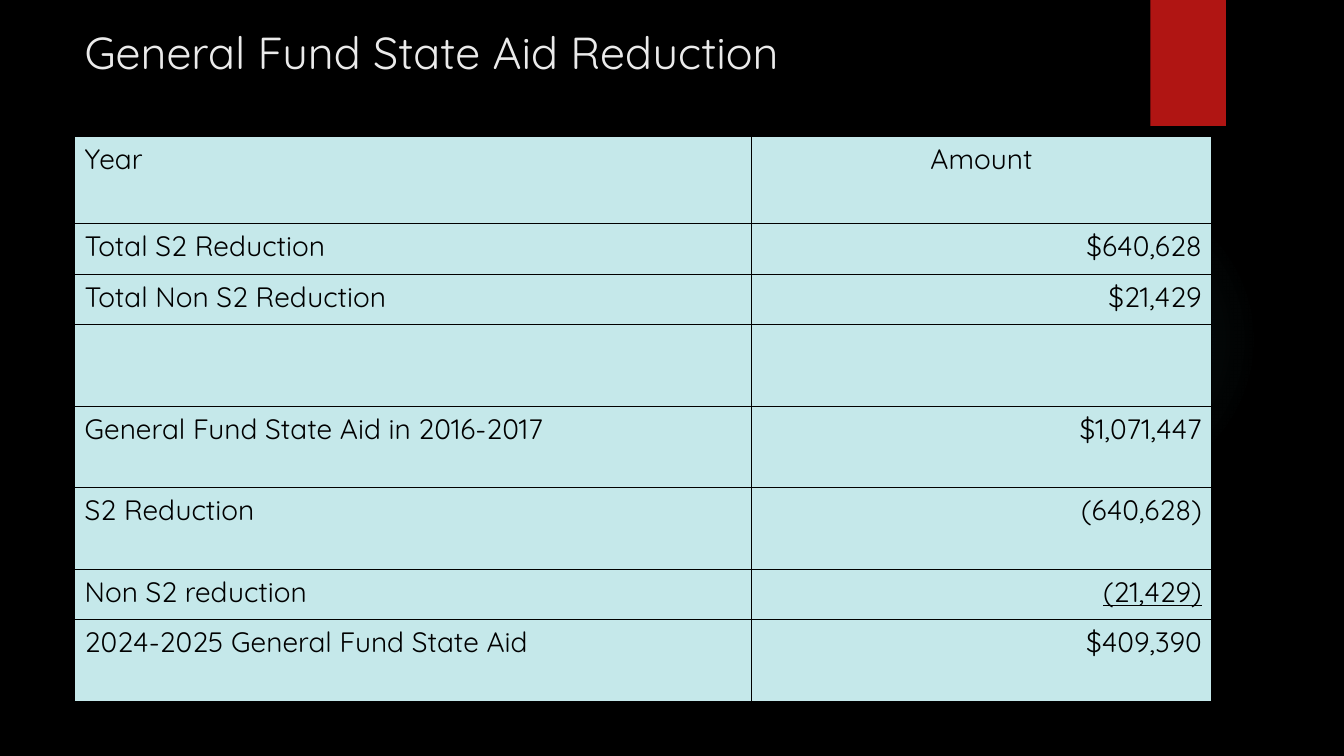
"""Build the General Fund state aid reduction slide."""
from dataclasses import dataclass

import lxml.etree
import pptx
import pptx.dml.color
import pptx.enum.shapes
import pptx.enum.text
import pptx.oxml
import pptx.oxml.ns
import pptx.util

Inches = pptx.util.Inches
Align = pptx.enum.text.PP_ALIGN
ShapeType = pptx.enum.shapes.MSO_SHAPE


@dataclass(frozen=True)
class Theme:
    """Colours, font and type sizes of the slide."""
    font: str = "Quicksand"
    background: str = "000000"
    accent: str = "B01513"
    glow: str = "50B9C1"
    title: str = "EBEBEB"
    cell: str = "C5E8EA"
    ink: str = "000000"
    title_size: int = 32
    table_size: int = 20


THEME = Theme()
COLUMN_WIDTHS = (6.71, 4.57)
TABLE_ROWS = (
    (0.87, "Year", "Amount"),
    (0.5, "Total S2 Reduction", "$640,628"),
    (0.5, "Total Non S2 Reduction", "$21,429"),
    (0.81, "", ""),
    (0.81, "General Fund State Aid in 2016-2017", "$1,071,447"),
    (0.81, "S2 Reduction", "(640,628)"),
    (0.5, "Non S2 reduction", "(21,429)"),
    (0.81, "2024-2025 General Fund State Aid", "$409,390"),
)
UNDERLINED = "(21,429)"


def rgb(value):
    """Return the colour for a hex value."""
    return pptx.dml.color.RGBColor.from_string(value)


def write_text(text_frame, text, *, size, color, align=Align.LEFT, underline=None):
    """Write one formatted paragraph into a text frame."""
    paragraph = text_frame.paragraphs[0]
    paragraph.alignment = align
    font = paragraph.font
    if text:
        run = paragraph.add_run()
        run.text = text
        font = run.font
    font.name = THEME.font
    font.size = pptx.util.Pt(size)
    font.color.rgb = rgb(color)
    font.underline = underline


def add_plain_shape(slide, kind, left, top, width, height):
    """Add a preset shape without line or shadow."""
    shape = slide.shapes.add_shape(
        kind, Inches(left), Inches(top), Inches(width), Inches(height))
    shape.shadow.inherit = False
    shape.line.fill.background()
    return shape


def add_glow(slide):
    """Add the faint round glow that fades towards its edge."""
    glow = add_plain_shape(slide, ShapeType.OVAL, 9.41, 1.83, 3.08, 3.08)
    glow.fill.background()
    stops = "".join(
        f'<a:gs pos="{position}000"><a:srgbClr val="{THEME.glow}">'
        f'<a:alpha val="{opacity}000"/></a:srgbClr></a:gs>'
        for position, opacity in ((0, 7), (36, 6), (69, 0)))
    gradient = pptx.oxml.parse_xml(
        f'<a:gradFill {pptx.oxml.ns.nsdecls("a")}><a:gsLst>{stops}</a:gsLst>'
        '<a:path path="circle"><a:fillToRect l="50000" t="50000" r="50000" b="50000"/>'
        '</a:path></a:gradFill>')
    properties = glow.element.spPr
    properties.replace(properties.find(pptx.oxml.ns.qn("a:noFill")), gradient)


def add_accent_bar(slide):
    """Add the red bar at the top edge."""
    bar = add_plain_shape(slide, ShapeType.RECTANGLE, 11.41, 0, 0.75, 1.25)
    bar.fill.solid()
    bar.fill.fore_color.rgb = rgb(THEME.accent)


def add_title(slide, text):
    """Add the slide title."""
    box = slide.shapes.add_textbox(Inches(0.74), Inches(0.2), Inches(10.29), Inches(1))
    box.text_frame.word_wrap = True
    write_text(box.text_frame, text, size=THEME.title_size, color=THEME.title)


def style_cell(cell):
    """Give a cell thin borders and the table fill."""
    properties = cell._tc.get_or_add_tcPr()
    for side in ("lnL", "lnR", "lnT", "lnB"):
        properties.append(pptx.oxml.parse_xml(
            f'<a:{side} {pptx.oxml.ns.nsdecls("a")} w="{pptx.util.Pt(1)}"><a:solidFill>'
            f'<a:srgbClr val="{THEME.ink}"/></a:solidFill></a:{side}>'))
    cell.fill.solid()
    cell.fill.fore_color.rgb = rgb(THEME.cell)


def add_aid_table(slide):
    """Add the table of state aid amounts."""
    height = sum(row[0] for row in TABLE_ROWS)
    table = slide.shapes.add_table(
        len(TABLE_ROWS), len(COLUMN_WIDTHS), Inches(0.74), Inches(1.35),
        Inches(sum(COLUMN_WIDTHS)), Inches(height)).table
    table.first_row = False
    table.horz_banding = False
    for column, width in zip(table.columns, COLUMN_WIDTHS):
        column.width = Inches(width)
    for row_index, (row_height, *texts) in enumerate(TABLE_ROWS):
        table.rows[row_index].height = Inches(row_height)
        amount_align = Align.RIGHT if row_index else Align.CENTER
        for column_index, text in enumerate(texts):
            cell = table.cell(row_index, column_index)
            style_cell(cell)
            write_text(cell.text_frame, text, size=THEME.table_size, color=THEME.ink,
                       align=amount_align if column_index else Align.LEFT,
                       underline=True if text == UNDERLINED else None)


def main():
    """Build and save the presentation."""
    presentation = pptx.Presentation()
    presentation.slide_width = Inches(13.33)
    presentation.slide_height = Inches(7.5)
    slide = presentation.slides.add_slide(presentation.slide_layouts[6])
    slide.background.fill.solid()
    slide.background.fill.fore_color.rgb = rgb(THEME.background)
    add_glow(slide)
    add_accent_bar(slide)
    add_title(slide, "General Fund State Aid Reduction")
    add_aid_table(slide)
    presentation.save("out.pptx")


if __name__ == "__main__":
    main()
